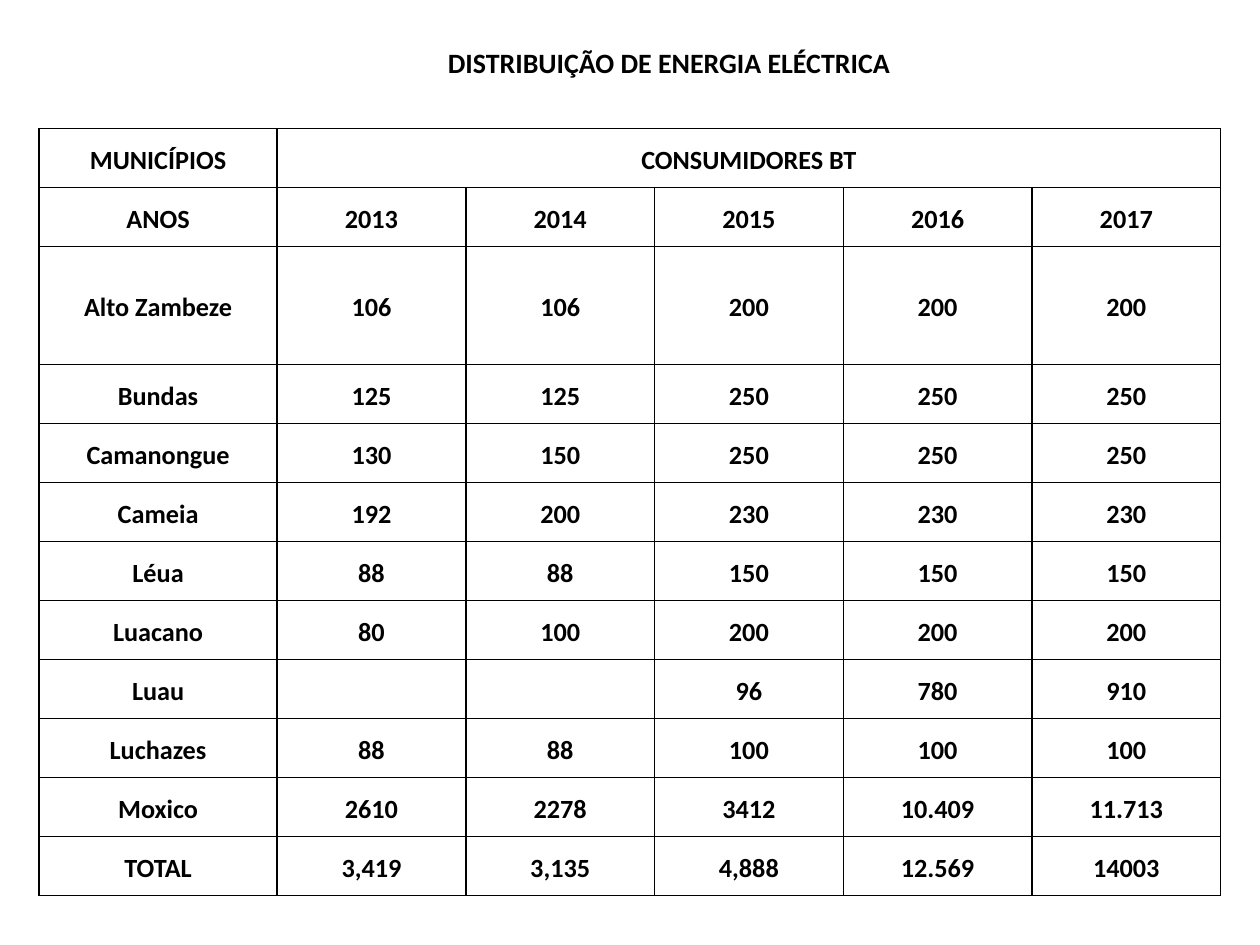
from dataclasses import dataclass

from lxml.etree import SubElement
from pptx import Presentation
from pptx.dml.color import RGBColor
from pptx.enum.text import MSO_ANCHOR as Anchor, PP_ALIGN as Align
from pptx.oxml.ns import qn
from pptx.util import Inches, Pt


@dataclass(frozen=True)
class Theme:
    font: str = "Calibri"
    ink: str = "000000"
    paper: str = "FFFFFF"
    title_size: int = 16
    cell_size: int = 15
    border: int = 1
    line_spacing: float = 1.15


THEME = Theme()

HEADING = "DISTRIBUIÇÃO DE ENERGIA ELÉCTRICA"
CONSUMERS = [
    ["MUNICÍPIOS", "CONSUMIDORES BT", "", "", "", ""],
    ["ANOS", "2013", "2014", "2015", "2016", "2017"],
    ["Alto Zambeze", "106", "106", "200", "200", "200"],
    ["Bundas", "125", "125", "250", "250", "250"],
    ["Camanongue", "130", "150", "250", "250", "250"],
    ["Cameia", "192", "200", "230", "230", "230"],
    ["Léua", "88", "88", "150", "150", "150"],
    ["Luacano", "80", "100", "200", "200", "200"],
    ["Luau", "", "", "96", "780", "910"],
    ["Luchazes", "88", "88", "100", "100", "100"],
    ["Moxico", "2610", "2278", "3412", "10.409", "11.713"],
    ["TOTAL", "3,419", "3,135", "4,888", "12.569", "14003"],
]
TALL_ROW = 2  # Alto Zambeze takes the height of two rows


def write(paragraph, text, size):
    """Add one bold, centred run."""
    paragraph.alignment = Align.CENTER
    run = paragraph.add_run()
    run.text = text
    run.font.name = THEME.font
    run.font.size = Pt(size)
    run.font.bold = True
    run.font.color.rgb = RGBColor.from_string(THEME.ink)


def add_heading(slide, left, top, width, height):
    heading = slide.shapes.title
    heading.left, heading.top = Inches(left), Inches(top)
    heading.width, heading.height = Inches(width), Inches(height)
    frame = heading.text_frame
    frame.word_wrap = True
    frame.vertical_anchor = Anchor.TOP
    write(frame.paragraphs[0], HEADING, THEME.title_size)


def add_borders(cell):
    properties = cell._tc.get_or_add_tcPr()
    # Border lines come ahead of the fill in the cell properties
    for position, side in enumerate(("lnL", "lnR", "lnT", "lnB")):
        line = SubElement(properties, qn(f"a:{side}"), w=str(Pt(THEME.border)))
        fill = SubElement(line, qn("a:solidFill"))
        SubElement(fill, qn("a:srgbClr"), val=THEME.ink)
        properties.insert(position, line)


def format_cell(cell, text):
    cell.fill.solid()
    cell.fill.fore_color.rgb = RGBColor.from_string(THEME.paper)
    add_borders(cell)
    cell.vertical_anchor = Anchor.MIDDLE
    cell.margin_left = cell.margin_right = Inches(0.07)
    cell.margin_top = cell.margin_bottom = 0
    if text:
        paragraph = cell.text_frame.paragraphs[0]
        paragraph.line_spacing = THEME.line_spacing
        write(paragraph, text, THEME.cell_size)


def add_consumers(slide, left, top, width, height):
    row_count, column_count = len(CONSUMERS), len(CONSUMERS[0])
    table = slide.shapes.add_table(
        row_count, column_count,
        Inches(left), Inches(top), Inches(width), Inches(height),
    ).table
    table.first_row = table.horz_banding = False

    # Names get a wider column; the years share the rest equally
    name_width = 1.89
    year_width = (width - name_width) / (column_count - 1)
    for index, column in enumerate(table.columns):
        column.width = Inches(year_width if index else name_width)
    row_height = height / (row_count + 1)
    for index, row in enumerate(table.rows):
        row.height = Inches(row_height * (2 if index == TALL_ROW else 1))

    for row, texts in zip(table.rows, CONSUMERS):
        for cell, text in zip(row.cells, texts):
            format_cell(cell, text)
    table.cell(0, 1).merge(table.cell(0, column_count - 1))


def main():
    deck = Presentation()
    deck.slide_width, deck.slide_height = Inches(10), Inches(7.5)
    slide = deck.slides.add_slide(deck.slide_layouts[5])
    slide.background.fill.solid()
    slide.background.fill.fore_color.rgb = RGBColor.from_string(THEME.paper)
    add_consumers(slide, 0.31, 1.02, 9.38, 6.09)
    add_heading(slide, 2.81, 0.31, 5, 0.67)
    deck.save("out.pptx")


if __name__ == "__main__":
    main()
